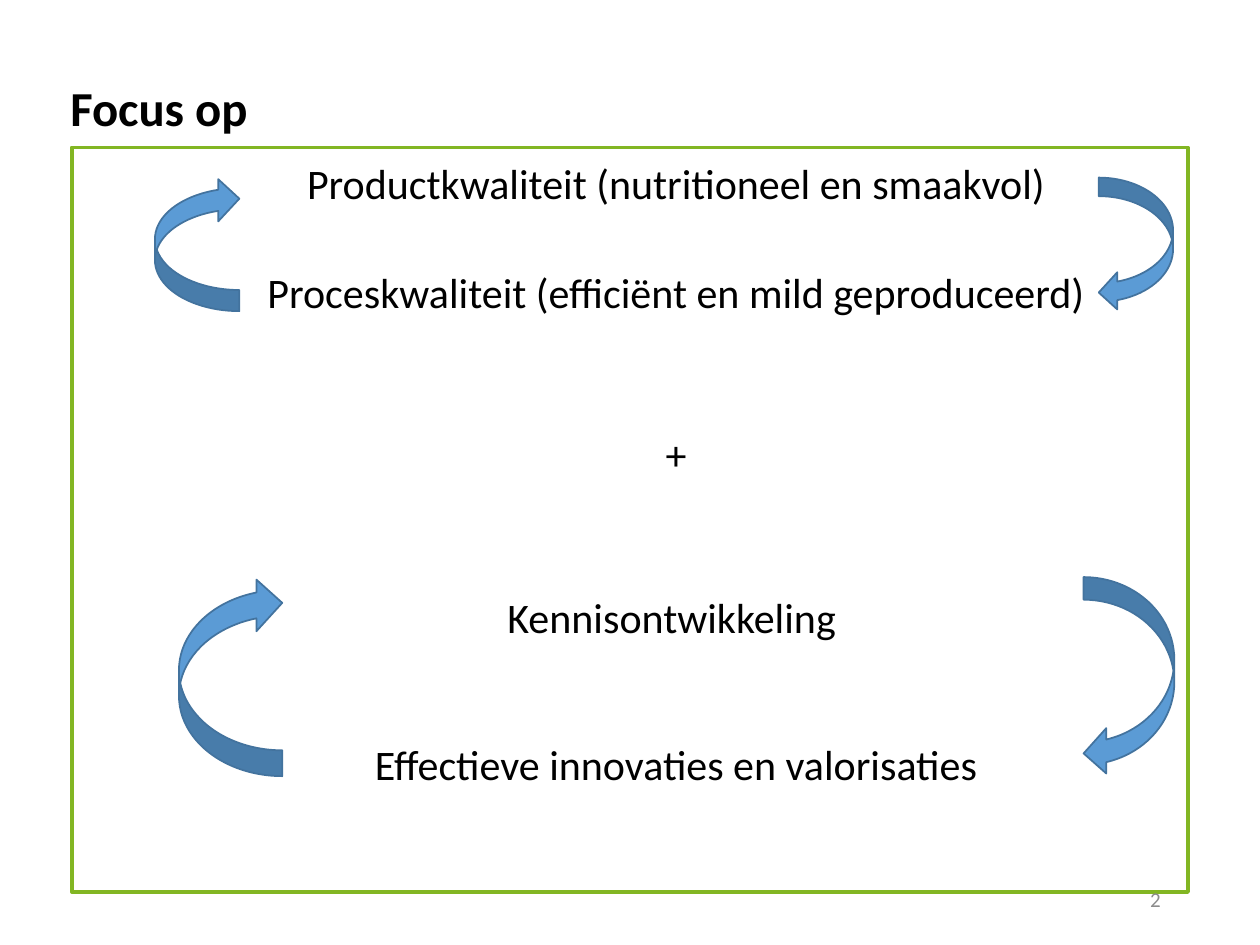
from dataclasses import dataclass

from pptx import Presentation
from pptx import util as u
from pptx.dml.color import RGBColor
from pptx.enum import shapes, text

BLACK = RGBColor(0x00, 0x00, 0x00)
GRAY = RGBColor(0x8C, 0x8C, 0x8C)
GREEN = RGBColor(0x82, 0xB6, 0x23)
BLUE = RGBColor(0x5B, 0x9B, 0xD5)
DARK_BLUE = RGBColor(0x43, 0x73, 0x9E)

KIND = shapes.MSO_SHAPE
ALIGN = text.PP_ALIGN
ANCHOR = text.MSO_ANCHOR


@dataclass
class Area:
    left: float
    top: float
    width: float
    height: float

    def lengths(self) -> list:
        return [u.Inches(n) for n in (self.left, self.top, self.width, self.height)]


@dataclass
class Line:
    wording: str
    gap: float = 0
    indent: float = 0


@dataclass
class Arrow:
    area: Area
    rising: bool


FRAME = Area(0.57, 1.17, 8.86, 5.91)
TITLE = Area(0.46, 0.61, 8.62, 0.54)
BODY = Area(0.77, 1.25, 8.62, 5.77)
NUMBER = Area(7.06, 6.95, 2.25, 0.4)

FOCUS_LINES = [
    Line("Productkwaliteit (nutritioneel en smaakvol)", indent=0.07),
    Line("Proceskwaliteit (efficiënt en mild geproduceerd)", 36, 0.07),
    Line("+", 67, 0.07),
    Line("Kennisontwikkeling", 67),
    Line("Effectieve innovaties en valorisaties", 58, 0.07),
]

ARROWS = [
    Arrow(Area(8.72, 1.41, 0.59, 1.06), False),
    Arrow(Area(1.23, 1.41, 0.67, 1.06), True),
    Arrow(Area(8.6, 4.58, 0.72, 1.58), False),
    Arrow(Area(1.42, 4.58, 0.82, 1.58), True),
]


def apply(target, values: dict) -> None:
    for name, value in values.items():
        setattr(target, name, value)


def add_text(page, area: Area, lines: list[Line], frame: dict, layout: dict,
             font: dict, color: RGBColor) -> None:
    box = page.shapes.add_textbox(*area.lengths())
    apply(box.text_frame, {"word_wrap": True, **frame})
    for index, line in enumerate(lines):
        para = box.text_frame.add_paragraph() if index else box.text_frame.paragraphs[0]
        apply(para, {"space_before": u.Pt(line.gap), **layout})
        if line.indent:
            para._p.get_or_add_pPr().set("marL", str(u.Inches(line.indent)))
        span = para.add_run()
        span.text = line.wording
        apply(span.font, {"name": "Calibri", **font})
        span.font.color.rgb = color


def add_outlined(page, kind, area: Area, color: RGBColor, weight: float):
    shape = page.shapes.add_shape(kind, *area.lengths())
    shape.shadow.inherit = False
    shape.line.color.rgb = color
    shape.line.width = u.Pt(weight)
    return shape


def add_arrow(page, arrow: Arrow) -> None:
    kind = KIND.CURVED_RIGHT_ARROW if arrow.rising else KIND.CURVED_LEFT_ARROW
    shape = add_outlined(page, kind, arrow.area, DARK_BLUE, 1)
    shape.fill.solid()
    shape.fill.fore_color.rgb = BLUE
    if arrow.rising:
        shape._element.spPr.xfrm.set("flipV", "1")


def main() -> None:
    deck = Presentation()
    apply(deck, {"slide_width": u.Inches(10), "slide_height": u.Inches(7.5)})
    page = deck.slides.add_slide(deck.slide_layouts[6])

    add_outlined(page, KIND.RECTANGLE, FRAME, GREEN, 2).fill.background()
    add_text(page, TITLE, [Line("Focus op")],
             {"vertical_anchor": ANCHOR.MIDDLE},
             {"line_spacing": 0.9},
             {"size": u.Pt(27.9), "bold": True}, BLACK)
    add_text(page, BODY, FOCUS_LINES,
             {"margin_left": u.Inches(0.6)},
             {"line_spacing": 0.9, "alignment": ALIGN.CENTER},
             {"size": u.Pt(24)}, BLACK)
    add_text(page, NUMBER, [Line("2")],
             {"vertical_anchor": ANCHOR.MIDDLE},
             {"line_spacing": u.Pt(12), "alignment": ALIGN.RIGHT},
             {"size": u.Pt(12)}, GRAY)
    for arrow in ARROWS:
        add_arrow(page, arrow)

    deck.save("out.pptx")


if __name__ == "__main__":
    main()
